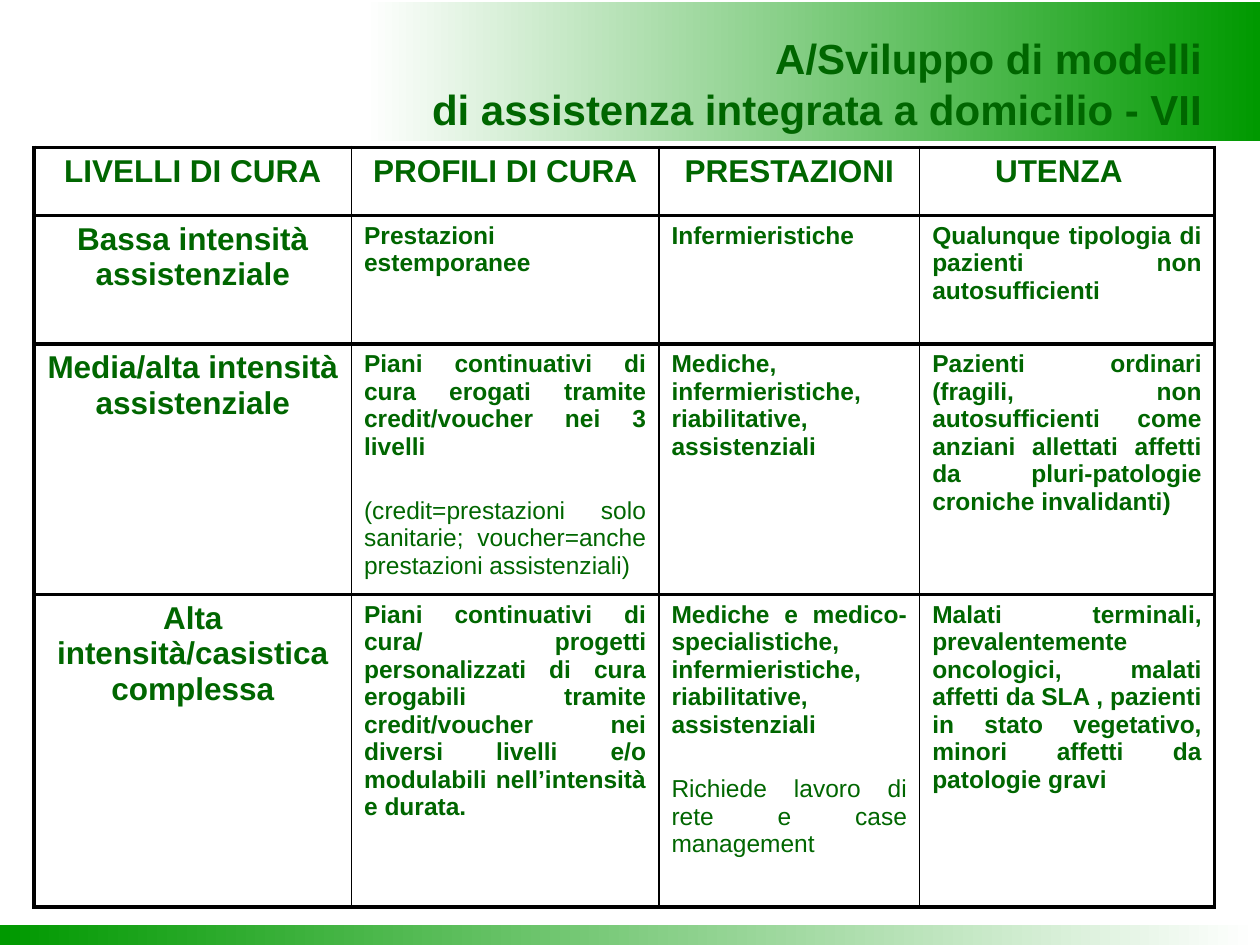
from lxml import etree
from pptx import Presentation
from pptx.dml.color import RGBColor
from pptx.enum.shapes import MSO_SHAPE
from pptx.enum.text import PP_ALIGN
from pptx.oxml.ns import qn
from pptx.util import Inches, Pt

RECTANGLE = MSO_SHAPE.RECTANGLE
CENTER, JUSTIFY, RIGHT = PP_ALIGN.CENTER, PP_ALIGN.JUSTIFY, PP_ALIGN.RIGHT

COLORS = {"text": "006600", "band": "009900", "page": "FFFFFF", "rule": "000000"}
FONT = "Arial"

TITLE = "A/Sviluppo di modelli\vdi assistenza integrata a domicilio - VII"
HEADERS = ["LIVELLI DI CURA", "PROFILI DI CURA", "PRESTAZIONI", "UTENZA"]
# Each cell lists its paragraphs: the first is bold, a following note is plain
CARE_LEVELS = [
    [
        ["Bassa intensità assistenziale"],
        ["Prestazioni estemporanee"],
        ["Infermieristiche"],
        ["Qualunque tipologia di pazienti non autosufficienti"],
    ],
    [
        ["Media/alta intensità assistenziale"],
        ["Piani continuativi di cura erogati tramite credit/voucher nei 3 livelli",
         "(credit=prestazioni solo sanitarie; voucher=anche prestazioni assistenziali)"],
        ["Mediche, infermieristiche, riabilitative, assistenziali"],
        ["Pazienti ordinari (fragili, non autosufficienti come anziani allettati "
         "affetti da pluri-patologie croniche invalidanti)"],
    ],
    [
        ["Alta intensità/casistica complessa"],
        ["Piani continuativi di cura/ progetti personalizzati di cura erogabili tramite "
         "credit/voucher nei diversi livelli e/o modulabili nell’intensità e durata."],
        ["Mediche e medico-specialistiche, infermieristiche, riabilitative, assistenziali",
         "Richiede lavoro di rete e case management"],
        ["Malati terminali, prevalentemente oncologici, malati affetti da SLA , pazienti "
         "in stato vegetativo, minori affetti da patologie gravi"],
    ],
]
COLUMN_WIDTHS = [2.52, 2.44, 2.07, 2.34]
ROW_HEIGHTS = [0.54, 1.02, 1.99, 2.48]
BANDS = [((2.89, 0.02, 7.11, 1.1), 0), ((0, 7.34, 9.98, 0.16), 180)]  # place, rotation
OUTER_RULE, INNER_RULE = 2.25, 1
NOTE_GAP = 21


def rgb(name):
    return RGBColor.from_string(COLORS[name])


def style(paragraph, size, align, bold=True):
    paragraph.alignment = align
    for key, value in {"name": FONT, "size": Pt(size), "bold": bold}.items():
        setattr(paragraph.font, key, value)
    paragraph.font.color.rgb = rgb("text")


def add_band(slide, place, rotation):
    band = slide.shapes.add_shape(RECTANGLE, *map(Inches, place))
    band.rotation = rotation
    band.shadow.inherit = False
    band.line.fill.background()
    band.fill.gradient()
    band.fill.gradient_angle = 0
    for stop, position, name in zip(band.fill.gradient_stops, (0, 1), ("page", "band")):
        stop.position = position
        stop.color.rgb = rgb(name)


def set_borders(cell, widths):
    properties = cell._tc.get_or_add_tcPr()
    for side, width in widths.items():
        line = etree.SubElement(properties, qn(f"a:ln{side}"), w=str(Pt(width)))
        fill = etree.SubElement(line, qn("a:solidFill"))
        etree.SubElement(fill, qn("a:srgbClr"), val=COLORS["rule"])


def fill_cell(cell, paragraphs, size, align):
    frame = cell.text_frame
    frame.text = "\n".join(paragraphs)
    for index, paragraph in enumerate(frame.paragraphs):
        style(paragraph, size, align, bold=index == 0)
        if index:
            paragraph.space_before = Pt(NOTE_GAP)


def add_care_table(slide):
    rows = [[[header] for header in HEADERS]] + CARE_LEVELS
    last = len(HEADERS) - 1
    table = slide.shapes.add_table(
        len(rows), len(HEADERS), Inches(0.27), Inches(1.17),
        Inches(sum(COLUMN_WIDTHS)), Inches(sum(ROW_HEIGHTS))).table
    table.first_row = table.horz_banding = False
    for column, width in zip(table.columns, COLUMN_WIDTHS):
        column.width = Inches(width)
    for row, height in zip(table.rows, ROW_HEIGHTS):
        row.height = Inches(height)
    for r, row in enumerate(rows):
        for c, paragraphs in enumerate(row):
            cell = table.cell(r, c)
            heading = r == 0 or c == 0
            fill_cell(cell, paragraphs, 18 if heading else 14,
                      CENTER if heading else JUSTIFY)
            set_borders(cell, {
                "L": OUTER_RULE if c == 0 else INNER_RULE,
                "R": OUTER_RULE if c == last else INNER_RULE,
                "T": OUTER_RULE,
                "B": OUTER_RULE,
            })
            cell.fill.background()
    # The last header sits slightly left of centre
    table.cell(0, last).margin_right = Inches(0.23)


def add_title(slide):
    box = slide.shapes.add_textbox(Inches(3.11), Inches(0.21), Inches(6.53), Inches(0.85))
    box.text_frame.word_wrap = True
    box.text_frame.text = TITLE
    style(box.text_frame.paragraphs[0], 24, RIGHT)


def main():
    deck = Presentation()
    deck.slide_width, deck.slide_height = Inches(10), Inches(7.5)
    slide = deck.slides.add_slide(deck.slide_layouts[6])
    # Gradient bands at top and bottom
    for place, rotation in BANDS:
        add_band(slide, place, rotation)
    # Levels of care
    add_care_table(slide)
    # Title over the top band
    add_title(slide)
    deck.save("out.pptx")


if __name__ == "__main__":
    main()
